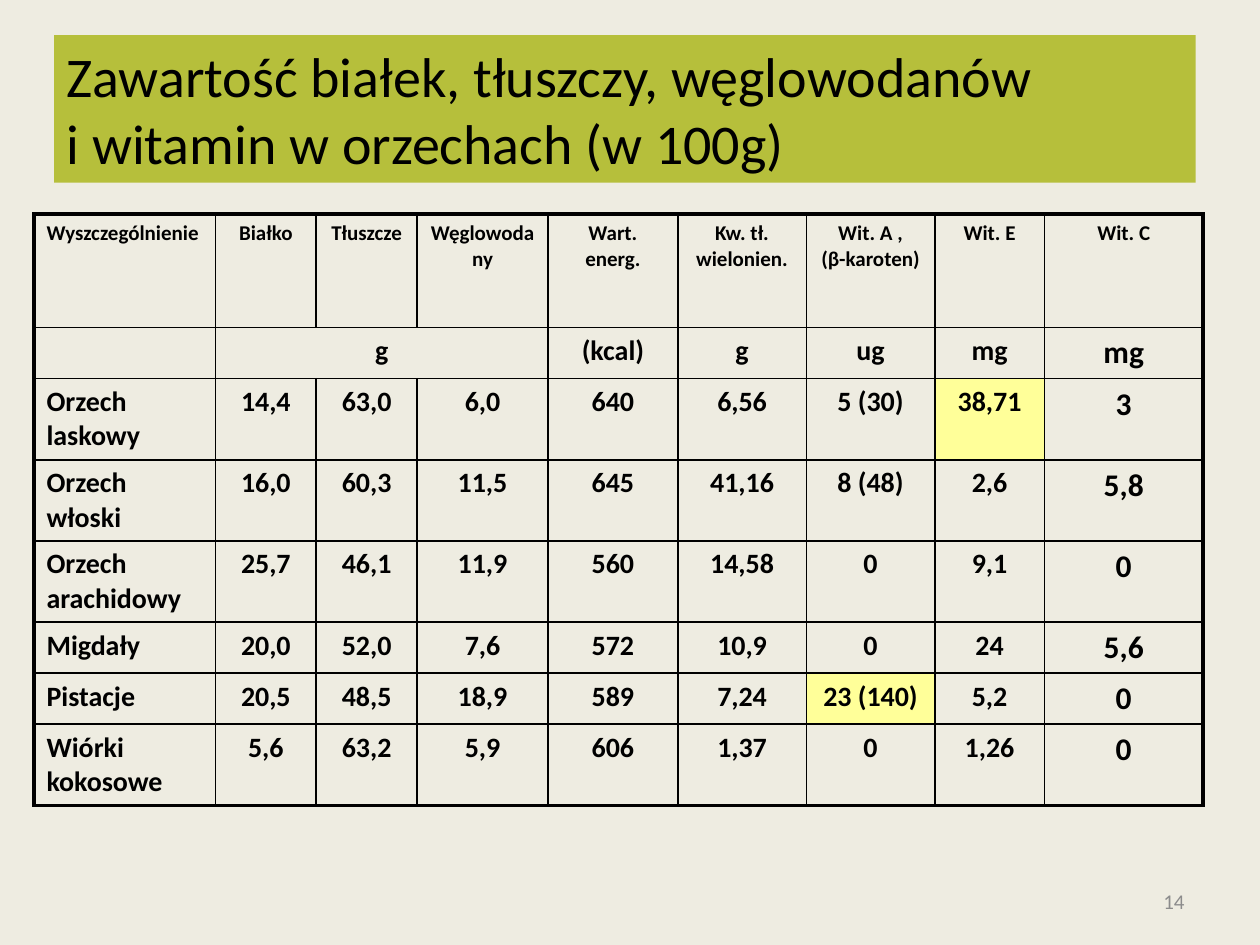
"""Build the slide on nutrient content of nuts."""
from lxml.etree import SubElement
from pptx import Presentation
from pptx.dml.color import RGBColor
from pptx.enum.shapes import MSO_SHAPE
from pptx.enum.text import MSO_ANCHOR, PP_ALIGN
from pptx.oxml.ns import qn
from pptx.util import Inches, Pt

BLACK = RGBColor(0x00, 0x00, 0x00)
GREY = RGBColor(0x8C, 0x8C, 0x8C)
CREAM = RGBColor(0xEE, 0xEC, 0xE1)
OLIVE = RGBColor(0xB6, 0xBF, 0x3B)
YELLOW = RGBColor(0xFF, 0xFF, 0x99)

TITLE = "Zawartość białek, tłuszczy, węglowodanów\vi witamin w orzechach (w 100g)"
PAGE = "14"
ROWS = [
    ("Wyszczególnienie", "Białko", "Tłuszcze", "Węglowodany", "Wart. energ.",
     "Kw. tł. wielonien.", "Wit. A ,\n(β-karoten)", "Wit. E", "Wit. C"),
    ("", "g", "", "", "(kcal)", "g", "ug", "mg", "mg"),
    ("Orzech laskowy", "14,4", "63,0", "6,0", "640", "6,56", "5 (30)", "38,71", "3"),
    ("Orzech włoski", "16,0", "60,3", "11,5", "645", "41,16", "8 (48)", "2,6", "5,8"),
    ("Orzech arachidowy", "25,7", "46,1", "11,9", "560", "14,58", "0", "9,1", "0"),
    ("Migdały", "20,0", "52,0", "7,6", "572", "10,9", "0", "24", "5,6"),
    ("Pistacje", "20,5", "48,5", "18,9", "589", "7,24", "23 (140)", "5,2", "0"),
    ("Wiórki kokosowe", "5,6", "63,2", "5,9", "606", "1,37", "0", "1,26", "0"),
]
HIGHLIGHTS = {"38,71", "23 (140)"}
COLUMN_WIDTHS = [1.44, 0.8, 0.8, 1.04, 1.03, 1.02, 1.02, 0.87, 1.26]
ROW_HEIGHTS = [0.9, 0.4, 0.64, 0.64, 0.64, 0.4, 0.4, 0.64]
INNER, OUTER = 1, 2.25


def write(frame, text, size, color=BLACK, bold=False, align=PP_ALIGN.LEFT):
    frame.text = text
    frame.word_wrap = True
    for paragraph in frame.paragraphs:
        paragraph.alignment = align
        for run in paragraph.runs:
            run.font.name = "Calibri"
            run.font.size = Pt(size)
            run.font.bold = bold
            run.font.color.rgb = color


def set_borders(cell, widths):
    properties = cell._tc.get_or_add_tcPr()
    for position, (side, width) in enumerate(widths.items()):
        line = properties.makeelement(qn(f"a:ln{side}"), {"w": str(Pt(width))})
        properties.insert(position, line)
        fill = SubElement(line, qn("a:solidFill"))
        SubElement(fill, qn("a:srgbClr"), val=str(BLACK))


def add_nutrient_table(slide):
    last_row, last_column = len(ROWS) - 1, len(COLUMN_WIDTHS) - 1
    table = slide.shapes.add_table(
        len(ROWS), len(COLUMN_WIDTHS), Inches(0.27), Inches(1.7),
        Inches(sum(COLUMN_WIDTHS)), Inches(sum(ROW_HEIGHTS))).table
    table.first_row = table.horz_banding = False
    for column, width in zip(table.columns, COLUMN_WIDTHS):
        column.width = Inches(width)
    for row, height in zip(table.rows, ROW_HEIGHTS):
        row.height = Inches(height)
    for r, values in enumerate(ROWS):
        for c, value in enumerate(values):
            cell = table.cell(r, c)
            size = 12 if r == 0 else 18 if c == last_column else 16
            write(cell.text_frame, value, size, bold=True,
                  align=PP_ALIGN.CENTER if c else PP_ALIGN.LEFT)
            if value in HIGHLIGHTS:
                cell.fill.solid()
                cell.fill.fore_color.rgb = YELLOW
            else:
                cell.fill.background()
            set_borders(cell, {
                "L": OUTER if c == 0 else INNER,
                "R": OUTER if c == last_column else INNER,
                "T": OUTER if r == 0 else INNER,
                "B": OUTER if r == last_row else INNER})
    table.cell(1, 1).merge(table.cell(1, 3))


def main():
    deck = Presentation()
    deck.slide_width, deck.slide_height = Inches(10), Inches(7.5)
    slide = deck.slides.add_slide(deck.slide_layouts[6])
    slide.background.fill.solid()
    slide.background.fill.fore_color.rgb = CREAM

    add_nutrient_table(slide)

    title = slide.shapes.add_shape(
        MSO_SHAPE.RECTANGLE, Inches(0.43), Inches(0.28), Inches(9.06), Inches(1.17))
    title.shadow.inherit = False
    title.fill.solid()
    title.fill.fore_color.rgb = OLIVE
    title.line.fill.background()
    title.text_frame.vertical_anchor = MSO_ANCHOR.TOP
    write(title.text_frame, TITLE, 32)

    page_number = slide.shapes.add_textbox(
        Inches(7.17), Inches(6.95), Inches(2.33), Inches(0.4))
    page_number.text_frame.vertical_anchor = MSO_ANCHOR.MIDDLE
    write(page_number.text_frame, PAGE, 12, color=GREY, align=PP_ALIGN.RIGHT)

    deck.save("out.pptx")


if __name__ == "__main__":
    main()
